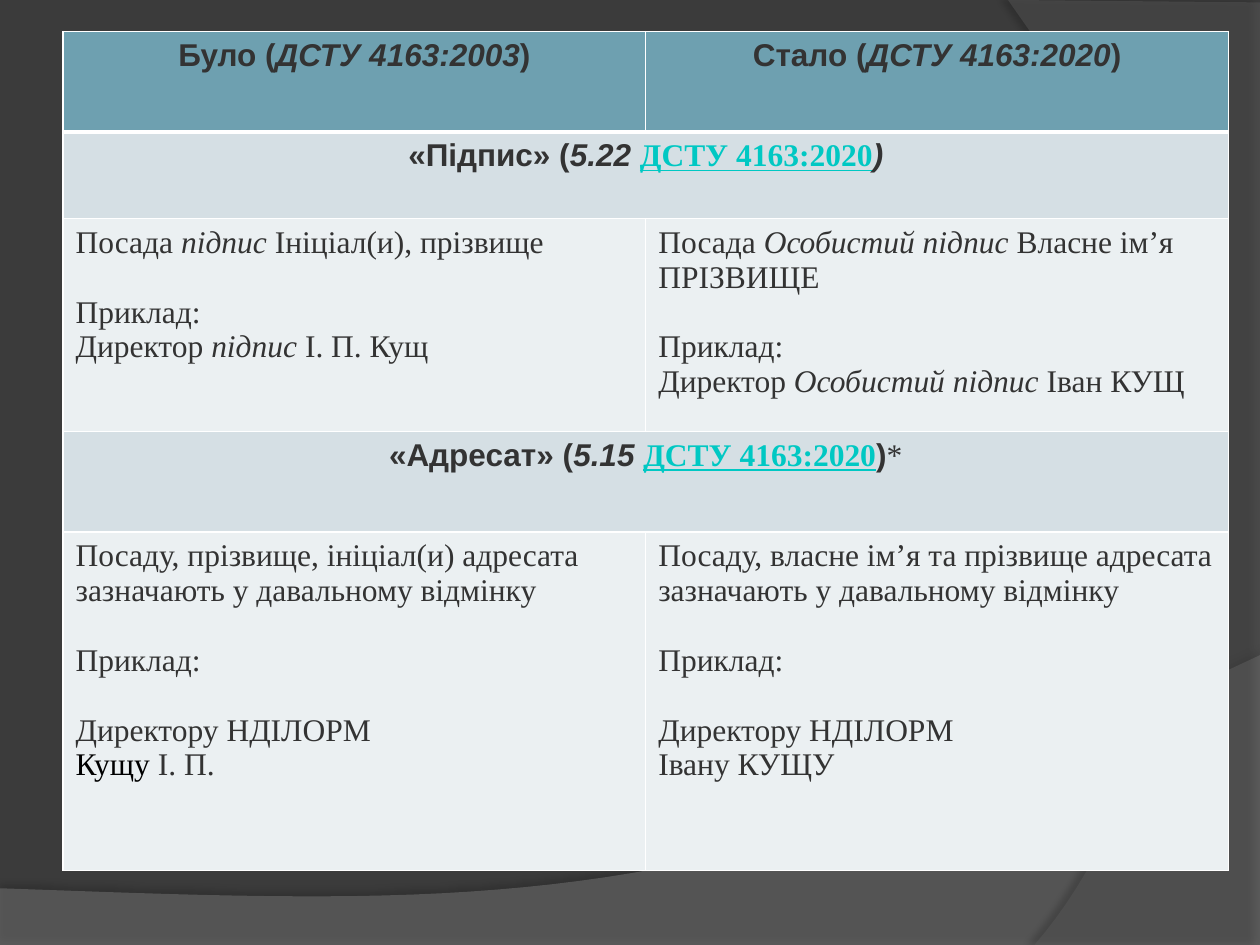
from dataclasses import dataclass

from lxml import etree
from pptx import Presentation
from pptx import util as u
from pptx.dml.color import RGBColor
from pptx.enum import text
from pptx.oxml import ns

COLORS = {
    "background": "3B3B3B", "wave": "7F7F7F", "arc": "5E5E5E", "shadow": "000000",
    "header": "6EA0B0", "section": "D5DFE4", "body": "EBF0F2", "border": "FFFFFF",
    "text": "333333", "link": "00C8C3", "black": "000000",
}
SANS, SERIF = "Arial", "Times New Roman"
FONT_SIZE = 18
LINE_GAP = 20
ROW_HEIGHTS = (57.5, 49.5, 121.5, 57.5, 193.5)


@dataclass(frozen=True)
class Run:
    text: str
    italic: bool = False
    bold: bool = False
    font: str = SERIF
    color: str = "text"
    underline: bool = False


@dataclass(frozen=True)
class Line:
    runs: tuple
    gap_before: bool = False


@dataclass(frozen=True)
class Decoration:
    outline: tuple
    color: str
    opacity: int
    shadow_opacity: int
    shadow_distance: float
    shadow_angle: int


def heading(value: str, italic: bool = False) -> Run:
    return Run(value, italic, True, SANS)


def link(value: str) -> Run:
    return Run(value, bold=True, color="link", underline=True)


def plain(value: str, gap_before: bool = False) -> Line:
    return Line((Run(value),), gap_before)


def signature(start: str, middle: str, end: str) -> Line:
    return Line((Run(start + "\u00a0"), Run(middle, True), Run("\u00a0" + end)))


def curve(start: tuple, first: tuple, second: tuple, end: tuple, steps: int = 40) -> tuple:
    points = []
    for step in range(steps + 1):
        t = step / steps
        weights = ((1 - t) ** 3, 3 * t * (1 - t) ** 2, 3 * t * t * (1 - t), t ** 3)
        points.append(tuple(sum(w * p[axis] for w, p in zip(weights, (start, first, second, end)))
                            for axis in (0, 1)))
    return tuple(points)


DECORATIONS = (
    Decoration(((0, 540), (720, 540))
               + curve((720, 374.4), (402.5, 524.9), (281.5, 517.7), (0, 507.6)),
               "wave", 45, 35, 3.5, 270),
    Decoration(((720, 1.4), (720, 540))
               + curve((591.1, 540), (673.2, 445.7), (733, 216), (576, 0)),
               "arc", 40, 45, 4, 180),
)

EXAMPLE = plain("Приклад:", True)
DIRECTOR = plain("Директору НДІЛОРМ", True)
STANDARD = "ДСТУ 4163:2020"
ROWS = (
    ("header", tuple((Line((heading(f"{label} ("), heading(standard, True), heading(")"))),)
                     for label, standard in (("Було", "ДСТУ 4163:2003"), ("Стало", STANDARD)))),
    ("section", ((Line((heading("«Підпис» ("), heading("5.22\u00a0", True),
                        link(STANDARD), heading(")", True))),),)),
    ("body", (
        (signature("Посада", "підпис", "Ініціал(и), прізвище"), EXAMPLE,
         signature("Директор", "підпис", "І. П. Кущ")),
        (signature("Посада", "Особистий підпис", "Власне ім’я ПРІЗВИЩЕ"), EXAMPLE,
         signature("Директор", "Особистий підпис", "Іван КУЩ")))),
    ("section", ((Line((heading("«Адресат» ("), heading("5.15\u00a0", True),
                        link(STANDARD), heading(")"), Run("*"))),),)),
    ("body", (
        (plain("Посаду, прізвище, ініціал(и) адресата зазначають у давальному відмінку"),
         EXAMPLE, DIRECTOR, Line((Run("Кущу", color="black"), Run(" І. П.")))),
        (plain("Посаду, власне ім’я та прізвище адресата зазначають у давальному відмінку"),
         EXAMPLE, DIRECTOR, plain("Івану КУЩУ")))),
)


def rgb(name: str) -> RGBColor:
    return RGBColor.from_string(COLORS[name])


def add_element(parent, tag: str, **attributes):
    return etree.SubElement(parent, ns.qn(tag), {key: str(value) for key, value in attributes.items()})


def add_decoration(slide, decoration: Decoration) -> None:
    start, *others = [(u.Pt(x), u.Pt(y)) for x, y in decoration.outline]
    builder = slide.shapes.build_freeform(*start)
    builder.add_line_segments(others, close=True)
    shape = builder.convert_to_shape()
    shape.line.fill.background()
    shape.fill.solid()
    shape.fill.fore_color.rgb = rgb(decoration.color)
    properties = shape.element.spPr
    color = properties.find(ns.qn("a:solidFill")).find(ns.qn("a:srgbClr"))
    add_element(color, "a:alpha", val=decoration.opacity * 1000)
    shape.shadow.inherit = False
    shadow = add_element(properties.find(ns.qn("a:effectLst")), "a:outerShdw", blurRad=u.Pt(4),
                         dist=u.Pt(decoration.shadow_distance), dir=decoration.shadow_angle * 60000)
    shadow_color = add_element(shadow, "a:srgbClr", val=COLORS["shadow"])
    add_element(shadow_color, "a:alpha", val=decoration.shadow_opacity * 1000)


def style_cell(cell, kind: str) -> None:
    properties = cell._tc.get_or_add_tcPr()
    for side in "LRTB":
        width = 3 if kind == "header" and side == "B" else 1
        border = add_element(properties, f"a:ln{side}", w=u.Pt(width))
        add_element(add_element(border, "a:solidFill"), "a:srgbClr", val=COLORS["border"])
    cell.fill.solid()
    cell.fill.fore_color.rgb = rgb(kind)


def write_cell(cell, lines: tuple, centered: bool) -> None:
    frame = cell.text_frame
    frame.text = "\n".join("".join(run.text for run in line.runs) for line in lines)
    for paragraph, line in zip(frame.paragraphs, lines):
        paragraph.alignment = text.PP_ALIGN.CENTER if centered else text.PP_ALIGN.LEFT
        paragraph.space_before = u.Pt(LINE_GAP if line.gap_before else 0)
        paragraph.clear()
        for item in line.runs:
            run = paragraph.add_run()
            run.text = item.text
            font = run.font
            font.name, font.size = item.font, u.Pt(FONT_SIZE)
            font.bold, font.italic, font.underline = item.bold, item.italic, item.underline
            font.color.rgb = rgb(item.color)


def add_comparison(slide) -> None:
    frame = slide.shapes.add_table(len(ROWS), 2, u.Pt(36), u.Pt(18), u.Pt(666), u.Pt(sum(ROW_HEIGHTS)))
    table = frame.table
    for row, height, (kind, contents) in zip(table.rows, ROW_HEIGHTS, ROWS):
        row.height = u.Pt(height)
        cells = list(row.cells)
        for cell in cells:
            style_cell(cell, kind)
        if len(contents) == 1:
            cells[0].merge(cells[1])
        for cell, lines in zip(cells, contents):
            write_cell(cell, lines, kind != "body")


def main() -> None:
    """Build the slide comparing the two editions of the standard."""
    presentation = Presentation()
    presentation.slide_width, presentation.slide_height = u.Pt(720), u.Pt(540)
    slide = presentation.slides.add_slide(presentation.slide_layouts[6])
    slide.background.fill.solid()
    slide.background.fill.fore_color.rgb = rgb("background")
    for decoration in DECORATIONS:
        add_decoration(slide, decoration)
    add_comparison(slide)
    presentation.save("out.pptx")


if __name__ == "__main__":
    main()
